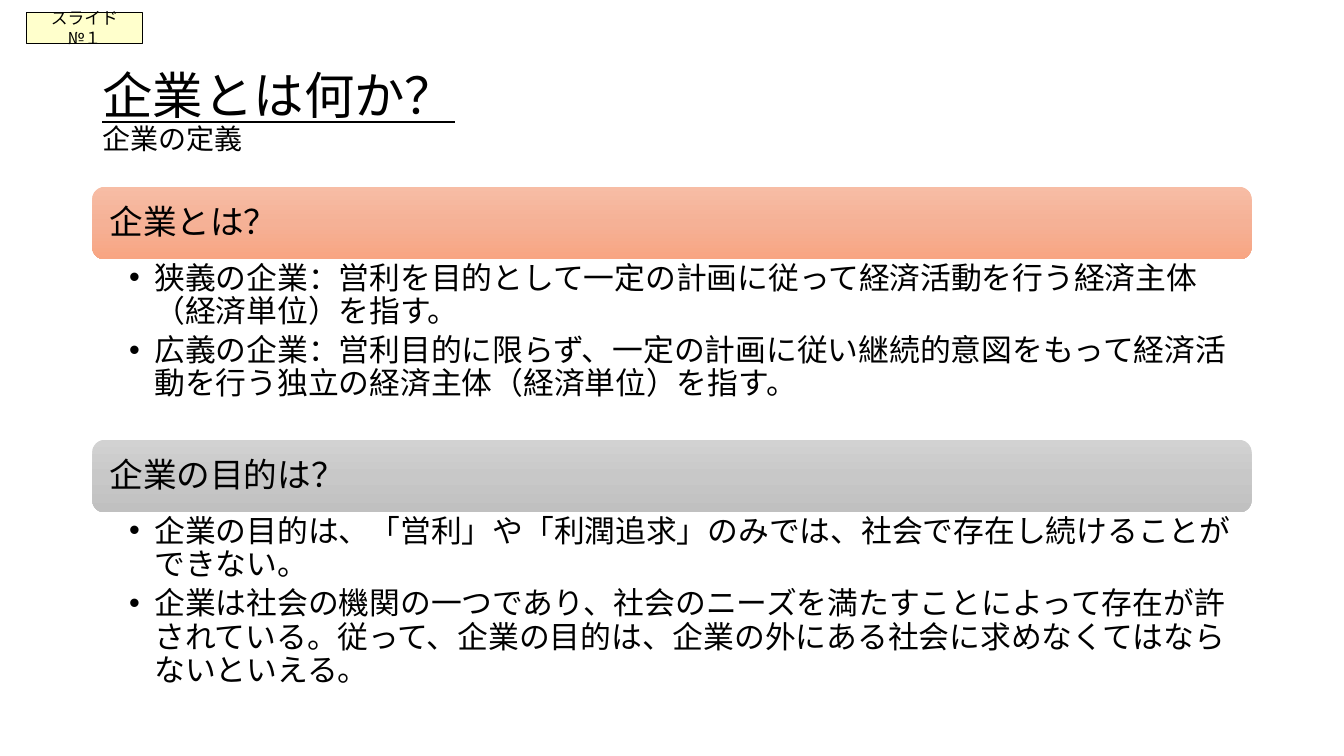
from copy import deepcopy
from pptx import Presentation
from pptx.dml.color import RGBColor
from pptx.enum.shapes import MSO_SHAPE as Preset
from pptx.enum.text import MSO_ANCHOR as Anchor, MSO_AUTO_SIZE as AutoSize, PP_ALIGN as Align
from pptx.oxml.ns import qn
from pptx.util import Pt

FONT = "Noto Sans CJK JP"
BLACK = RGBColor(0x00, 0x00, 0x00)
CREAM = RGBColor(0xFF, 0xFF, 0xCC)
ORANGES = [RGBColor(0xF7, 0xBD, 0xA5), RGBColor(0xF5, 0xB1, 0x96), RGBColor(0xF8, 0xA5, 0x82)]
GREYS = [RGBColor(0xD2, 0xD2, 0xD2), RGBColor(0xC8, 0xC8, 0xC8), RGBColor(0xC0, 0xC0, 0xC0)]

TAG = "スライド№１"
TITLE = "企業とは何か？"
SUBTITLE = "企業の定義"
SECTIONS = [
    ("企業とは？", ORANGES, 172, [
        "狭義の企業：営利を目的として一定の計画に従って経済活動を行う経済主体（経済単位）を指す。",
        "広義の企業：営利目的に限らず、一定の計画に従い継続的意図をもって経済活動を行う独立の経済主体（経済単位）を指す。",
    ]),
    ("企業の目的は？", GREYS, 132, [
        "企業の目的は、「営利」や「利潤追求」のみでは、社会で存在し続けることができない。",
        "企業は社会の機関の一つであり、社会のニーズを満たすことによって存在が許されている。従って、企業の目的は、企業の外にある社会に求めなくてはならないといえる。",
    ]),
]

PX = 9525
LEFT, WIDTH = 88, 1104
TITLE_TOP, TITLE_HEIGHT = 38, 140
BAR_HEIGHT = 69


def box(left, top, width, height):
    return [length * PX for length in (left, top, width, height)]


def place(shape, *bounds):
    shape.left, shape.top, shape.width, shape.height = box(*bounds)


def set_insets(frame, left, top, right, bottom):
    frame.margin_left, frame.margin_top = left * PX, top * PX
    frame.margin_right, frame.margin_bottom = right * PX, bottom * PX


def style(paragraph, size, align=Align.LEFT, spacing=0.9):
    paragraph.alignment = align
    paragraph.line_spacing = spacing
    font = paragraph.font
    font.size, font.name = Pt(size), FONT
    font.color.rgb = BLACK
    defaults = paragraph._p.pPr.find(qn("a:defRPr"))
    east_asian = defaults.makeelement(qn("a:ea"), {"typeface": FONT})
    defaults.find(qn("a:latin")).addnext(east_asian)


def add_bullet(paragraph):
    properties = paragraph._p.get_or_add_pPr()
    properties.set("marL", str(24 * PX))
    properties.set("indent", str(-24 * PX))
    bullet = properties.makeelement(qn("a:buChar"), {"char": "•"})
    properties.find(qn("a:defRPr")).addprevious(bullet)


def fill_gradient(shape, colours):
    shape.fill.gradient()
    shape.fill.gradient_angle = 270
    stop_list = shape._element.spPr.find(".//" + qn("a:gsLst"))
    stop_list.insert(1, deepcopy(stop_list[0]))
    for index, (stop, colour) in enumerate(zip(shape.fill.gradient_stops, colours)):
        stop.position = index / 2
        stop.color.rgb = colour


def add_title(slide):
    title = slide.shapes.title
    place(title, LEFT, TITLE_TOP, WIDTH, TITLE_HEIGHT)
    frame = title.text_frame
    frame.auto_size = AutoSize.NONE
    frame.vertical_anchor = Anchor.MIDDLE
    paragraph = frame.paragraphs[0]
    style(paragraph, 36)
    heading = paragraph.add_run()
    heading.text = TITLE
    heading.font.underline = True
    paragraph.add_line_break()
    subheading = paragraph.add_run()
    subheading.text = SUBTITLE
    subheading.font.size = Pt(20)


def add_bar(slide, top, heading, colours):
    bar = slide.shapes.add_shape(Preset.ROUNDED_RECTANGLE, *box(LEFT, top, WIDTH, BAR_HEIGHT))
    bar.shadow.inherit = False
    bar.line.fill.background()
    fill_gradient(bar, colours)
    frame = bar.text_frame
    frame.text = heading
    frame.vertical_anchor = Anchor.MIDDLE
    set_insets(frame, 13, 10, 13, 10)
    style(frame.paragraphs[0], 24)


def fill_body(body, top, height, items):
    place(body, LEFT, top, WIDTH, height)
    frame = body.text_frame
    frame.auto_size = AutoSize.NONE
    frame.vertical_anchor = Anchor.TOP
    set_insets(frame, 35, 3, 16, 3)
    frame.text = "\n".join(items)
    for paragraph in frame.paragraphs:
        style(paragraph, 22)
        paragraph.space_before = Pt(0)
        paragraph.space_after = Pt(4.4)
        add_bullet(paragraph)


def add_tag(slide):
    tag = slide.shapes.add_shape(Preset.RECTANGLE, *box(25, 12, 111, 29))
    tag.shadow.inherit = False
    tag.fill.solid()
    tag.fill.fore_color.rgb = CREAM
    tag.line.color.rgb = BLACK
    tag.line.width = Pt(0.75)
    frame = tag.text_frame
    frame.text = TAG
    frame.word_wrap = True
    frame.vertical_anchor = Anchor.MIDDLE
    style(frame.paragraphs[0], 12, Align.CENTER, 1.0)


def main():
    presentation = Presentation()
    presentation.slide_width, presentation.slide_height = 1280 * PX, 720 * PX
    slide = presentation.slides.add_slide(presentation.slide_layouts.get_by_name("Two Content"))
    add_title(slide)
    bodies = list(slide.placeholders)[1:]
    top = TITLE_TOP + TITLE_HEIGHT
    for body, (heading, colours, height, items) in zip(bodies, SECTIONS):
        add_bar(slide, top, heading, colours)
        fill_body(body, top + BAR_HEIGHT, height, items)
        top += BAR_HEIGHT + height
    add_tag(slide)
    presentation.save("out.pptx")


if __name__ == "__main__":
    main()
